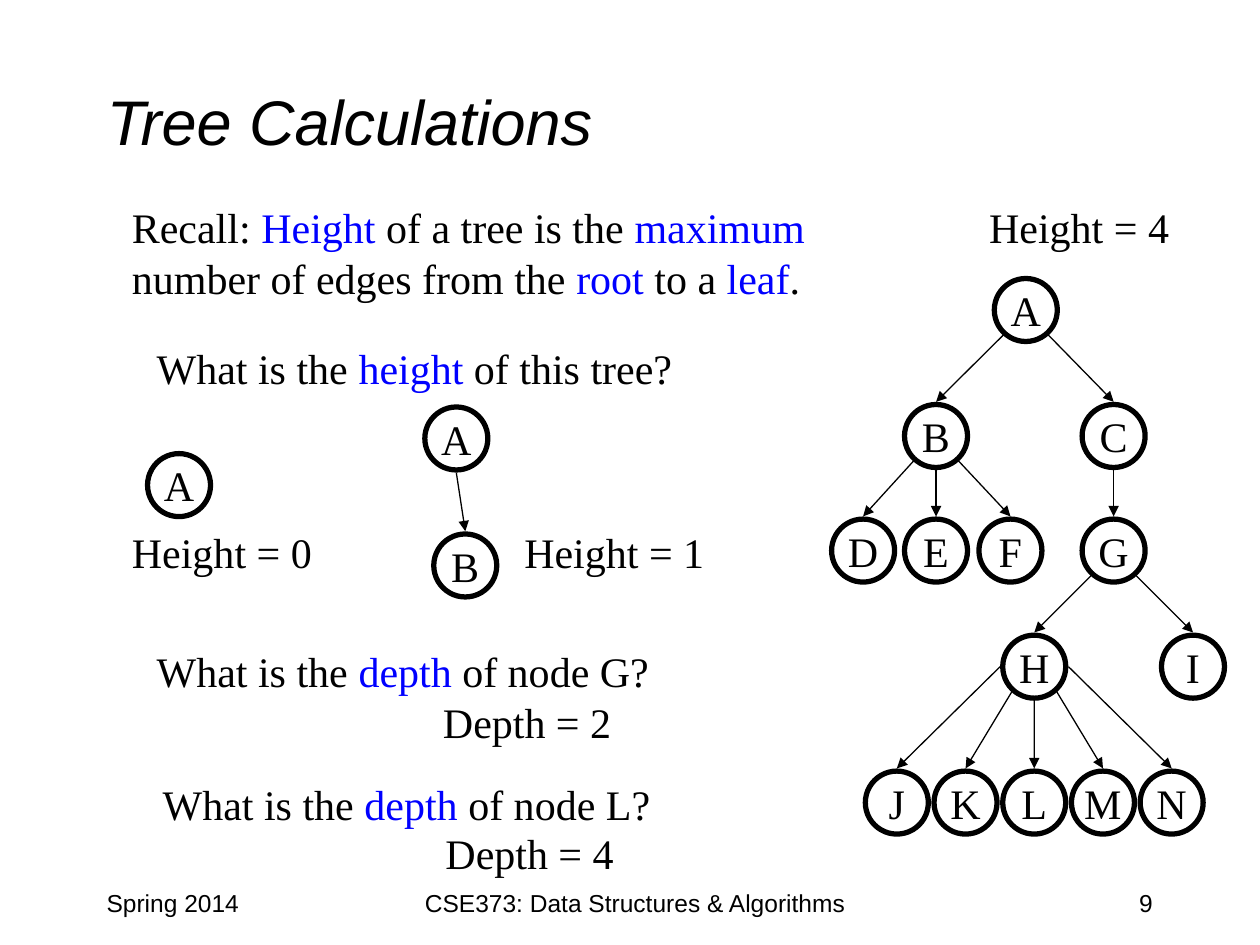
from pptx import Presentation
from pptx.dml.color import RGBColor
from pptx.enum.shapes import MSO_CONNECTOR, MSO_SHAPE
from pptx.enum.text import MSO_ANCHOR, PP_ALIGN
from pptx.oxml.ns import qn
from pptx.util import Cm, Pt
from lxml import etree

BLACK = RGBColor(0, 0, 0)
BLUE = RGBColor(0, 0, 255)
LEFT, MID, RIGHT = PP_ALIGN.LEFT, PP_ALIGN.CENTER, PP_ALIGN.RIGHT
CENTER = MSO_ANCHOR.MIDDLE
OVAL = MSO_SHAPE.OVAL
LINE = MSO_CONNECTOR.STRAIGHT
SERIF, SANS = "Times New Roman", "Arial"
SIZE = 1.27
REACH = 0.69


def write(frame, text, size, font=SERIF, align=LEFT):
    para = frame.paragraphs[0]
    para.alignment = align
    para.font.size = Pt(size)
    para.font.name = font
    for i, part in enumerate(text.split("*")):
        run = para.add_run()
        run.text = part
        run.font.color.rgb = BLUE if i % 2 else BLACK
    return para


deck = Presentation()
deck.slide_width, deck.slide_height = Cm(25.4), Cm(19.05)
slide = deck.slides.add_slide(deck.slide_layouts[5])
shapes = slide.shapes

title = shapes.title
title.left, title.top, title.width, title.height = Cm(1.9), Cm(0.84), Cm(21.6), Cm(3.17)
title.text_frame.vertical_anchor = CENTER
write(title.text_frame, "Tree Calculations", 36, SANS).font.italic = True

footers = [
    ("Spring 2014", 1.9, 5.29, LEFT),
    ("CSE373: Data Structures & Algorithms", 8.04, 9.53, MID),
    ("9", 18.2, 5.29, RIGHT),
]
for text, x, wide, align in footers:
    box = shapes.add_textbox(Cm(x), Cm(17.78), Cm(wide), Cm(SIZE))
    box.text_frame.word_wrap = True
    write(box.text_frame, text, 14, SANS, align)

# Starred words are blue.
notes = [
    ("Recall: *Height* of a tree is the *maximum* number of edges from the *root* to a *leaf*.",
     2.41, 3.94, 15.54, 2.31, True),
    ("Height = 4", 19.69, 3.94, 5.3, SIZE, True),
    ("What is the *height* of this tree?", 2.91, 6.78, 11.28, SIZE, False),
    ("Height = 0", 2.41, 10.49, 4.27, SIZE, True),
    ("Height = 1", 10.32, 10.49, 4.25, SIZE, True),
    ("What is the *depth* of node G?", 2.91, 12.88, 10.75, SIZE, False),
    ("Depth = 2", 8.68, 13.92, 4.27, SIZE, True),
    ("What is the *depth *of node L?", 3.03, 15.57, 10.56, SIZE, False),
    ("Depth = 4", 8.73, 16.56, 4.27, SIZE, True),
]
for text, x, y, wide, high, wrap in notes:
    box = shapes.add_textbox(Cm(x), Cm(y), Cm(wide), Cm(high))
    box.text_frame.word_wrap = wrap
    write(box.text_frame, text, 24)

rows = [
    (6.25, {"A": 20.68}),
    (8.79, {"B": 18.87, "C": 22.45}),
    (11.1, {"D": 17.4, "E": 18.87, "F": 20.37, "G": 22.45}),
    (13.44, {"H": 20.85, "I": 24.05}),
    (16.18, {name: 18.08 + 1.385 * i for i, name in enumerate("JKLMN")}),
]
tree = {name: (x, y) for y, row in rows for name, x in row.items()}
pair = {"A": (9.2, 8.84), "B": (9.38, 11.4)}
single = {"A": (3.61, 9.78)}

down, side = (0, REACH), (0.45, 0.5)
back = (-0.45, 0.5)
starts = {
    1: [down],
    2: [back, side],
    3: [back, down, side],
    5: [(-REACH, 0), back, down, side, (REACH, 0)],
}
links = [
    (tree, "A", "BC"), (tree, "B", "DEF"), (tree, "C", "G"),
    (tree, "G", "HI"), (tree, "H", "JKLMN"), (pair, "A", "B"),
]

for group in (tree, pair, single):
    for name, (x, y) in group.items():
        node = shapes.add_shape(OVAL, Cm(x - SIZE / 2), Cm(y - SIZE / 2), Cm(SIZE), Cm(SIZE))
        node.shadow.inherit = False
        node.fill.background()
        node.line.color.rgb = BLACK
        node.line.width = Pt(3)
        node.text_frame.word_wrap = False
        node.text_frame.vertical_anchor = CENTER
        write(node.text_frame, name, 24, align=MID)

for group, root, kids in links:
    x, y = group[root]
    for kid, (dx, dy) in zip(kids, starts[len(kids)]):
        end, top = group[kid]
        edge = shapes.add_connector(LINE, Cm(x + dx), Cm(y + dy), Cm(end), Cm(top - REACH))
        edge.line.color.rgb = BLACK
        edge.line.width = Pt(0.75)
        etree.SubElement(edge.line._get_or_add_ln(), qn("a:tailEnd"), type="triangle")
        etree.SubElement(edge._element.spPr, qn("a:effectLst"))

deck.save("out.pptx")
